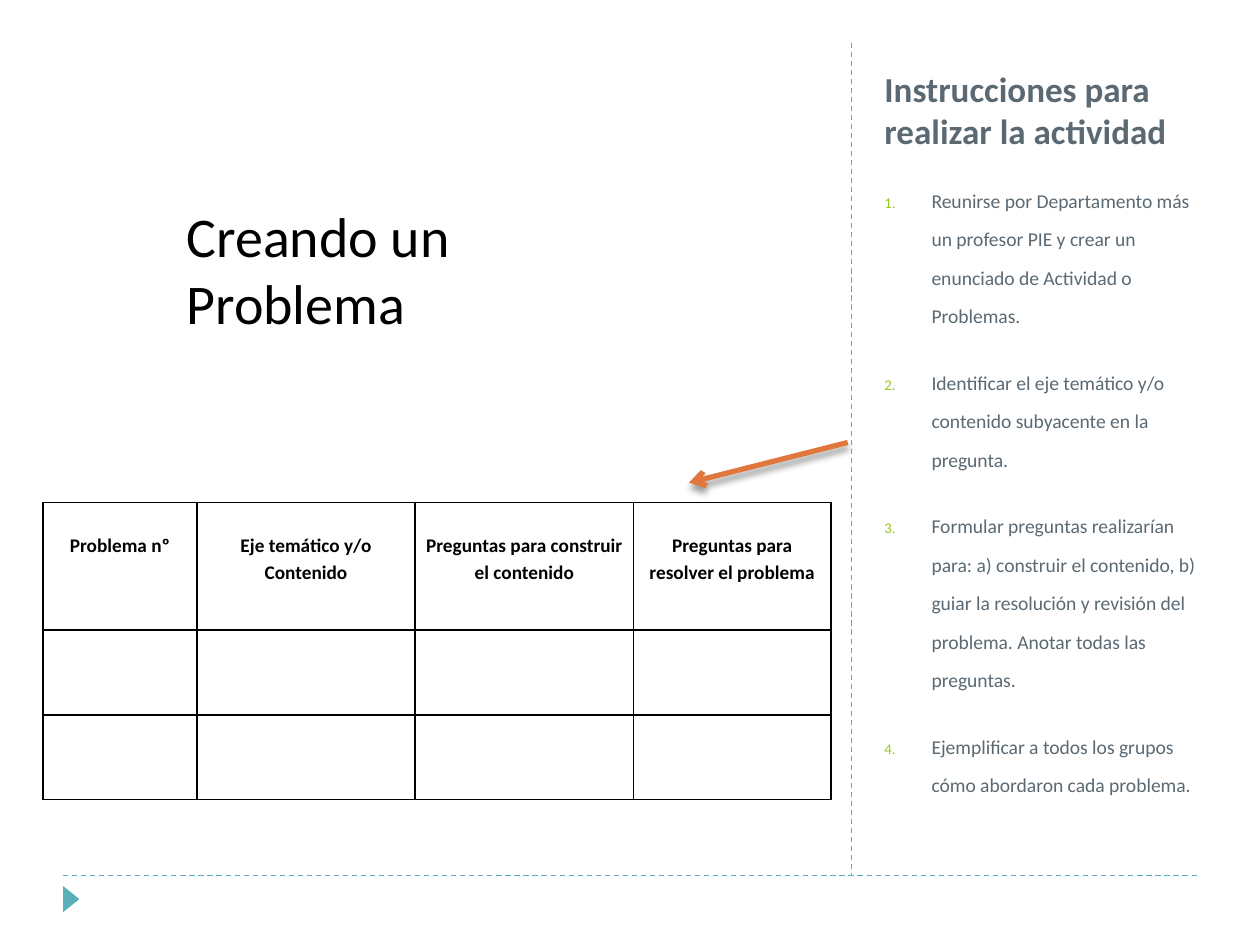
from lxml import etree
from pptx import Presentation
from pptx import util as u
from pptx.dml.color import RGBColor
from pptx.enum import dml, shapes, text
from pptx.oxml import ns

TEAL = RGBColor(0x59, 0xB0, 0xB9)
SLATE = RGBColor(0x5B, 0x69, 0x73)
GREEN = RGBColor(0x98, 0xC7, 0x23)
ORANGE = RGBColor(0xE0, 0x77, 0x3C)
BLACK = RGBColor(0, 0, 0)

STEPS = [
    "Reunirse por Departamento más un profesor PIE y crear un enunciado de Actividad o Problemas.",
    "Identificar el eje temático y/o contenido subyacente en la pregunta.",
    "Formular preguntas realizarían para: a) construir el contenido, b) guiar la resolución "
    "y revisión del problema. Anotar todas las preguntas.",
    "Ejemplificar a todos los grupos cómo abordaron cada problema.",
]
HEADERS = [
    ["Problema nº"],
    ["Eje temático y/o", "Contenido"],
    ["Preguntas para construir el contenido"],
    ["Preguntas para resolver el problema"],
]
COLUMN_WIDTHS = [3.1, 4.4, 4.4, 3.98]
ROW_HEIGHTS = [2.57, 1.71, 1.71]


def child(parent, tag, **values):
    element = etree.SubElement(parent, ns.qn(tag))
    for name, value in values.items():
        element.set(name, str(value))
    return element


def apply(target, values):
    for name, value in values.items():
        setattr(target, name, value)


class SlideBuilder:
    font = "Calibri"

    def __init__(self, page):
        self.page = page

    def paragraphs(self, frame, lines, size, color, bold=False, **para_format):
        for index, line in enumerate(lines):
            para = frame.paragraphs[0] if index == 0 else frame.add_paragraph()
            apply(para, para_format)
            span = para.add_run()
            span.text = line
            apply(span.font, {"name": self.font, "size": u.Pt(size), "bold": bold})
            span.font.color.rgb = color

    def text_box(self, place, lines, size, color, anchor=text.MSO_ANCHOR.TOP, **style):
        box = self.page.shapes.add_textbox(*map(u.Cm, place))
        apply(box.text_frame, {"word_wrap": True, "vertical_anchor": anchor})
        self.paragraphs(box.text_frame, lines, size, color, **style)
        return box

    def numbered_list(self, place, lines, size, color, number_color):
        box = self.text_box(place, lines, size, color, line_spacing=u.Pt(22),
                            space_before=u.Pt(6), space_after=u.Pt(10))
        for para in box.text_frame.paragraphs:
            props = para._p.get_or_add_pPr()
            props.set("marL", str(u.Cm(0.95)))
            props.set("indent", str(u.Cm(-0.95)))
            child(child(props, "a:buClr"), "a:srgbClr", val=number_color)
            child(props, "a:buSzPct", val=76000)
            child(props, "a:buAutoNum", type="arabicPeriod")

    def line(self, points, color, width, dash=None):
        line = self.page.shapes.add_connector(
            shapes.MSO_CONNECTOR.STRAIGHT, *map(u.Cm, points))
        line.line.color.rgb = color
        apply(line.line, {"width": u.Pt(width), "dash_style": dash})
        return line, child(line._element.spPr, "a:effectLst")

    def arrow(self, points, color, width):
        line, effects = self.line(points, color, width)
        child(line.line._get_or_add_ln(), "a:tailEnd", type="arrow")
        shadow = child(effects, "a:outerShdw", blurRad=u.Pt(4), dist=u.Pt(3.4),
                       dir=5400000, rotWithShape=0)
        child(child(shadow, "a:srgbClr", val=BLACK), "a:alpha", val=40000)

    def triangle(self, place, color, rotation):
        marker = self.page.shapes.add_shape(
            shapes.MSO_SHAPE.ISOSCELES_TRIANGLE, *map(u.Cm, place))
        marker.rotation = rotation
        marker.shadow.inherit = False
        marker.fill.solid()
        marker.fill.fore_color.rgb = color
        marker.line.fill.background()

    def border(self, cell):
        props = cell._tc.get_or_add_tcPr()
        for index, side in enumerate(("a:lnL", "a:lnR", "a:lnT", "a:lnB")):
            edge = child(props, side, w=u.Pt(1))
            child(child(edge, "a:solidFill"), "a:srgbClr", val=BLACK)
            props.insert(index, edge)

    def table(self, left, top, widths, heights, headers):
        table = self.page.shapes.add_table(
            len(heights), len(widths), u.Cm(left), u.Cm(top),
            u.Cm(sum(widths)), u.Cm(sum(heights))).table
        for column, width in zip(table.columns, widths):
            column.width = u.Cm(width)
        for row, height in zip(table.rows, heights):
            row.height = u.Cm(height)
        for cell in table.iter_cells():
            apply(cell, {"margin_left": u.Cm(0.13), "margin_right": u.Cm(0.13),
                         "margin_top": 0, "margin_bottom": 0})
            cell.fill.background()
            self.border(cell)
        for cell, lines in zip(table.rows[0].cells, headers):
            cell.margin_top = u.Cm(0.56)
            self.paragraphs(cell.text_frame, lines, 11, BLACK, bold=True,
                            alignment=text.PP_ALIGN.CENTER, line_spacing=1.15)


def main():
    deck = Presentation()
    apply(deck, {"slide_width": u.Cm(25.4), "slide_height": u.Cm(19.05)})
    builder = SlideBuilder(deck.slides.add_slide(deck.slide_layouts[6]))

    dash = dml.MSO_LINE.DASH
    builder.line((1.27, 17.65, 24.13, 17.65), TEAL, 0.75, dash)
    builder.line((17.17, 0.86, 17.17, 17.63), TEAL, 0.75, dash)
    builder.triangle((1.17, 17.96, 0.53, 0.33), TEAL, 90)
    builder.text_box((17.58, 0.84, 6.99, 2.34), ["Instrucciones para realizar la actividad"],
                     20, SLATE, text.MSO_ANCHOR.BOTTOM, bold=True)
    builder.numbered_list((17.58, 3.38, 6.99, 13.46), STEPS, 11.2, SLATE, GREEN)
    builder.table(0.87, 10.13, COLUMN_WIDTHS, ROW_HEIGHTS, HEADERS)
    builder.arrow((17.09, 8.92, 13.89, 9.73), ORANGE, 3)
    builder.text_box((3.51, 3.94, 8.79, 3), ["Creando un Problema"], 32, BLACK)

    deck.save("out.pptx")


if __name__ == "__main__":
    main()
